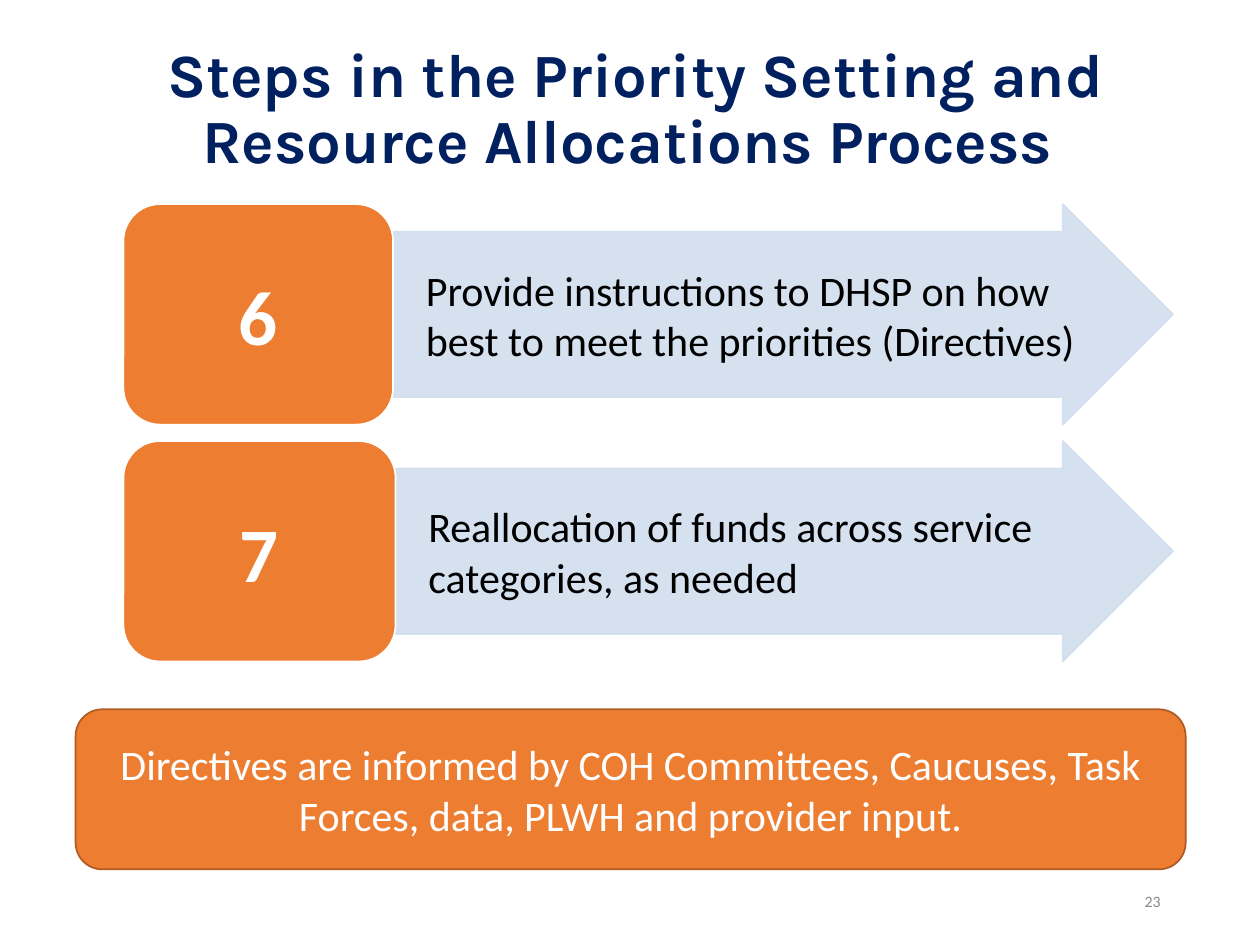
from lxml import etree
from pptx import Presentation
from pptx import util as u
from pptx.dml.color import RGBColor
from pptx.enum import shapes, text
from pptx.oxml.ns import qn

NAVY = RGBColor(0x00, 0x20, 0x60)
ORANGE = RGBColor(0xED, 0x7D, 0x31)
RUST = RGBColor(0xAF, 0x5C, 0x24)
PALE = RGBColor(0xD2, 0xDE, 0xEF)
GRAY = RGBColor(0x89, 0x89, 0x89)
WHITE = RGBColor(0xFF, 0xFF, 0xFF)
BLACK = RGBColor(0x00, 0x00, 0x00)

ROUND = shapes.MSO_SHAPE.ROUNDED_RECTANGLE
ARROW = shapes.MSO_SHAPE.RIGHT_ARROW
LEFT, MID, RIGHT = text.PP_ALIGN.LEFT, text.PP_ALIGN.CENTER, text.PP_ALIGN.RIGHT


class Deck:
    """Holds the base style and the current slide."""

    base = {"name": "Calibri", "size": u.Pt(24), "bold": False}

    def __init__(self, wide, high):
        self.prs = Presentation()
        self.prs.slide_width = u.Inches(wide)
        self.prs.slide_height = u.Inches(high)
        self.slide = self.prs.slides.add_slide(self.prs.slide_layouts[6])

    def letter(self, shape, words, color, align=MID, space=1.0, **font):
        frame = shape.text_frame
        frame.word_wrap = True
        frame.vertical_anchor = text.MSO_ANCHOR.MIDDLE
        para = frame.paragraphs[0]
        para.alignment, para.line_spacing = align, space
        run = para.add_run()
        run.text = words
        for key, value in {**self.base, **font}.items():
            setattr(run.font, key, value)
        run.font.color.rgb = color

    def label(self, box, words, color, inset=0.1, **style):
        shape = self.slide.shapes.add_textbox(*map(u.Inches, box))
        shape.text_frame.margin_left = u.Inches(inset)
        self.letter(shape, words, color, **style)

    def block(self, kind, box, fill, line):
        shape = self.slide.shapes.add_shape(kind, *map(u.Inches, box))
        shape.shadow.inherit = False
        shape.fill.solid()
        shape.fill.fore_color.rgb = fill
        shape.line.color.rgb = line
        shape.line.width = u.Pt(1)
        return shape

    def arrow(self, box):
        shape = self.block(ARROW, box, PALE, PALE)
        shape.adjustments[0] = 0.75
        # Make fill and line 90 % opaque
        for color in shape.element.spPr.iter(qn("a:srgbClr")):
            etree.SubElement(color, qn("a:alpha"), val="90000")

    def step(self, top, split, number, words):
        left, tip, high = 0.98, 9.31, 1.75
        self.arrow((split, top, tip - split, high))
        self.label((split, top + 0.22, 5.53, 1.31), words, BLACK,
                   inset=0.26, align=LEFT)
        tile = self.block(ROUND, (left, top, split - left, high), ORANGE, WHITE)
        self.letter(tile, number, WHITE, size=u.Pt(44), bold=True)


def main():
    deck = Deck(10, 7.5)

    # Title
    deck.label((0.73, 0.26, 8.62, 1.24),
               "Steps in the Priority Setting and Resource Allocations Process ",
               NAVY, space=0.9, name="Karla", size=u.Pt(35.1), bold=True)

    # Steps
    deck.step(1.62, 3.12, "6",
              "Provide instructions to DHSP on how best to meet the priorities (Directives)")
    deck.step(3.5, 3.14, "7",
              "Reallocation of funds across service categories, as needed")

    # Note
    note = deck.block(ROUND, (0.6, 5.63, 8.81, 1.27), ORANGE, RUST)
    deck.letter(note, "Directives are informed by COH Committees, Caucuses, "
                      "Task Forces, data, PLWH and provider input.", WHITE)

    # Page number
    deck.label((7.06, 6.95, 2.25, 0.4), "23", GRAY, align=RIGHT, size=u.Pt(9))

    deck.prs.save("out.pptx")


if __name__ == "__main__":
    main()
